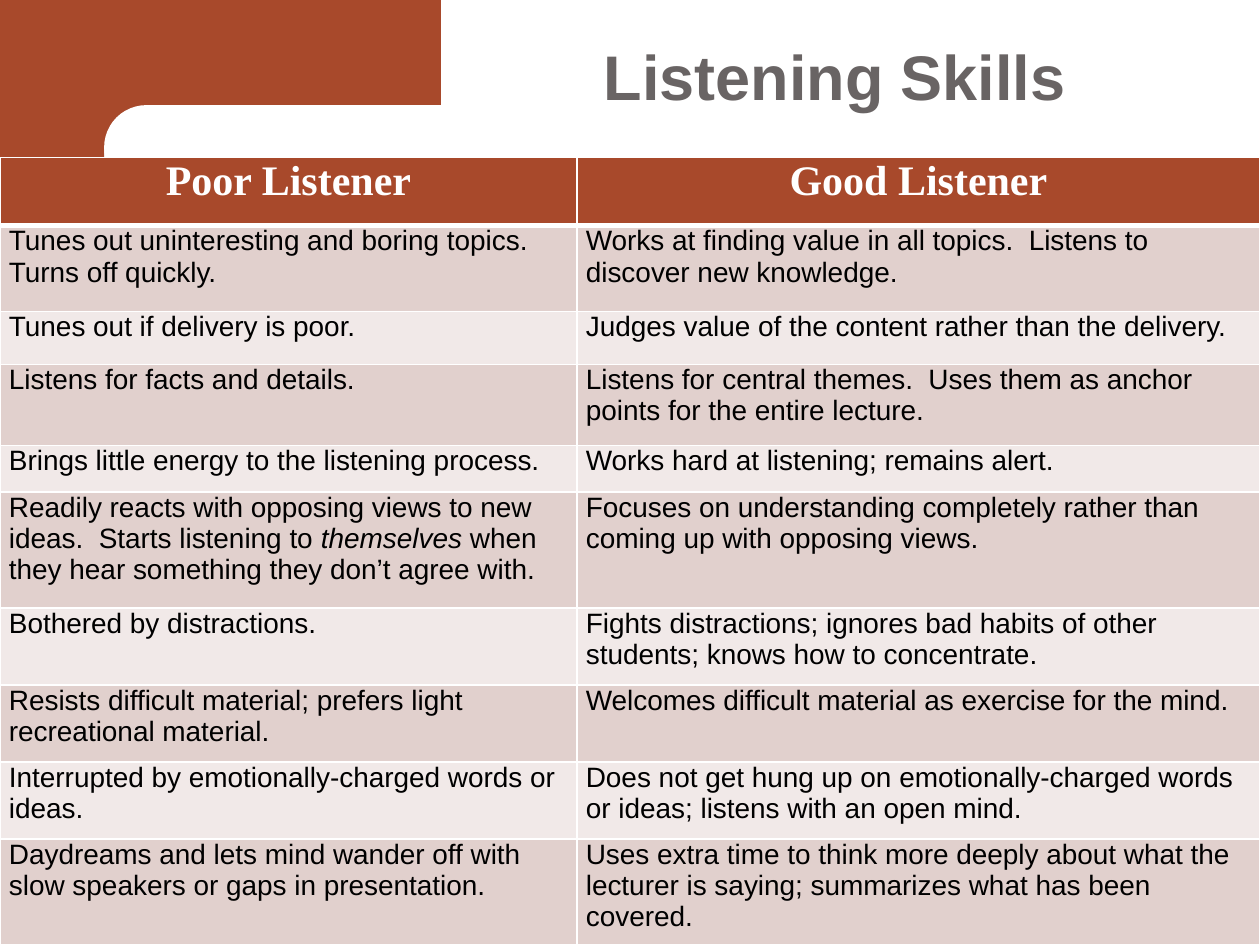
from lxml.etree import SubElement
from pptx import Presentation
from pptx.dml.color import RGBColor
from pptx.enum.shapes import MSO_SHAPE
from pptx.enum.text import MSO_ANCHOR, MSO_AUTO_SIZE, PP_ALIGN
from pptx.oxml.ns import qn
from pptx.util import Cm, Pt

RUST, WHITE, GREY, BLACK = "A8492B", "FFFFFF", "696464", "000000"
BANDS = ["E1D0CD", "F1E9E8"]
COLUMN_WIDTHS = [11.63, 13.77]
ROW_HEIGHTS = [1.37, 1.73, 1.07, 1.63, 0.94, 2.34, 1.55, 1.55, 1.55, 2.14]
EMPHASIS = "themselves"
WIDE_SPACED_CELL = (3, 1)
ROWS = [
    ("Poor Listener", "Good Listener"),
    ("Tunes out uninteresting and boring topics.  Turns off quickly.",
     "Works at finding value in all topics.  Listens to discover new knowledge."),
    ("Tunes out if delivery is poor.",
     "Judges value of the content rather than the delivery."),
    ("Listens for facts and details.",
     "Listens for central themes.  Uses them as anchor points for the entire lecture."),
    ("Brings little energy to the listening process.",
     "Works hard at listening; remains alert."),
    ("Readily reacts with opposing views to new ideas.  Starts listening to themselves "
     "when they hear something they don’t agree with.",
     "Focuses on understanding completely rather than coming up with opposing views."),
    ("Bothered by distractions.",
     "Fights distractions; ignores bad habits of other students; knows how to concentrate."),
    ("Resists difficult material; prefers light recreational material.",
     "Welcomes difficult material as exercise for the mind."),
    ("Interrupted by emotionally-charged words or ideas.",
     "Does not get hung up on emotionally-charged words or ideas; listens with an open mind."),
    ("Daydreams and lets mind wander off with slow speakers or gaps in presentation.",
     "Uses extra time to think more deeply about what the lecturer is saying; "
     "summarizes what has been covered."),
]


def color(value):
    return RGBColor.from_string(value)


def set_font(paragraph, name, size, value, bold):
    font = paragraph.font
    font.name, font.size, font.bold = name, Pt(size), bold
    font.color.rgb = color(value)


def add_block(slide, kind, left, top, width, height, value):
    shape = slide.shapes.add_shape(kind, Cm(left), Cm(top), Cm(width), Cm(height))
    shape.shadow.inherit = False
    shape.fill.solid()
    shape.fill.fore_color.rgb = color(value)
    shape.line.fill.background()
    return shape


def add_corner(slide, left, top, width, height):
    side, inner_top = 2.1, 2.12
    add_block(slide, MSO_SHAPE.RECTANGLE, left, top, side, height, RUST)
    add_block(slide, MSO_SHAPE.RECTANGLE, left + 1.9, top, width - 1.9, 2.97, RUST)
    cutout = add_block(slide, MSO_SHAPE.ROUNDED_RECTANGLE,
                       left + side, top + inner_top, 14.18, 1.7, WHITE)
    cutout.adjustments[0] = 0.5


def add_title(slide, left, top, width, height):
    title = slide.shapes.title
    slide.shapes._spTree.append(title._element)
    title.left, title.top, title.width, title.height = map(Cm, (left, top, width, height))
    frame = title.text_frame
    frame.text = "Listening Skills"
    frame.auto_size = MSO_AUTO_SIZE.NONE
    frame.vertical_anchor = MSO_ANCHOR.MIDDLE
    paragraph = frame.paragraphs[0]
    paragraph.alignment = PP_ALIGN.CENTER
    paragraph.line_spacing = 0.9
    set_font(paragraph, "Arial", 36, GREY, True)


def set_borders(cell, widths):
    properties = cell._tc.get_or_add_tcPr()
    for side, width in widths.items():
        line = SubElement(properties, qn(f"a:ln{side}"), w=str(Pt(width)))
        SubElement(SubElement(line, qn("a:solidFill")), qn("a:srgbClr"), val=WHITE)


def write_cell(paragraph, text):
    before, emphasis, after = text.partition(EMPHASIS)
    for part in filter(None, (before, emphasis, after)):
        run = paragraph.add_run()
        run.text = part
        if part == EMPHASIS:
            run.font.italic = True


def format_cell(cell, row, column):
    header = row == 0
    borders = {"L": 1, "R": 1, "T": 1, "B": 3 if header else 1}
    if row == 1:
        borders["T"] = 3
    set_borders(cell, borders)
    cell.fill.solid()
    cell.fill.fore_color.rgb = color(RUST if header else BANDS[(row - 1) % 2])
    cell.margin_left = cell.margin_right = Cm(0.18)
    cell.margin_top = cell.margin_bottom = 0
    paragraph = cell.text_frame.paragraphs[0]
    spacing = 6 if (row, column) == WIDE_SPACED_CELL else 3
    paragraph.space_before = paragraph.space_after = Pt(spacing)
    write_cell(paragraph, ROWS[row][column])
    if header:
        paragraph.alignment = PP_ALIGN.CENTER
        set_font(paragraph, "Times New Roman", 24, WHITE, True)
    else:
        set_font(paragraph, "Arial", 16, BLACK, False)


def add_comparison(slide, left, top, width, height):
    table = slide.shapes.add_table(len(ROWS), len(COLUMN_WIDTHS), Cm(left), Cm(top),
                                   Cm(width), Cm(height)).table
    for column, column_width in zip(table.columns, COLUMN_WIDTHS):
        column.width = Cm(column_width)
    for row, row_height in zip(table.rows, ROW_HEIGHTS):
        row.height = Cm(row_height)
    for row in range(len(ROWS)):
        for column in range(len(COLUMN_WIDTHS)):
            format_cell(table.cell(row, column), row, column)


def main():
    presentation = Presentation()
    presentation.slide_width, presentation.slide_height = Cm(25.4), Cm(19.05)
    slide = presentation.slides.add_slide(presentation.slide_layouts[5])
    add_corner(slide, 0, 0, 8.89, 19.05)
    add_title(slide, 8.89, 0.03, 15.88, 3.18)
    add_comparison(slide, 0, 3.18, sum(COLUMN_WIDTHS), sum(ROW_HEIGHTS))
    presentation.save("out.pptx")


if __name__ == "__main__":
    main()
